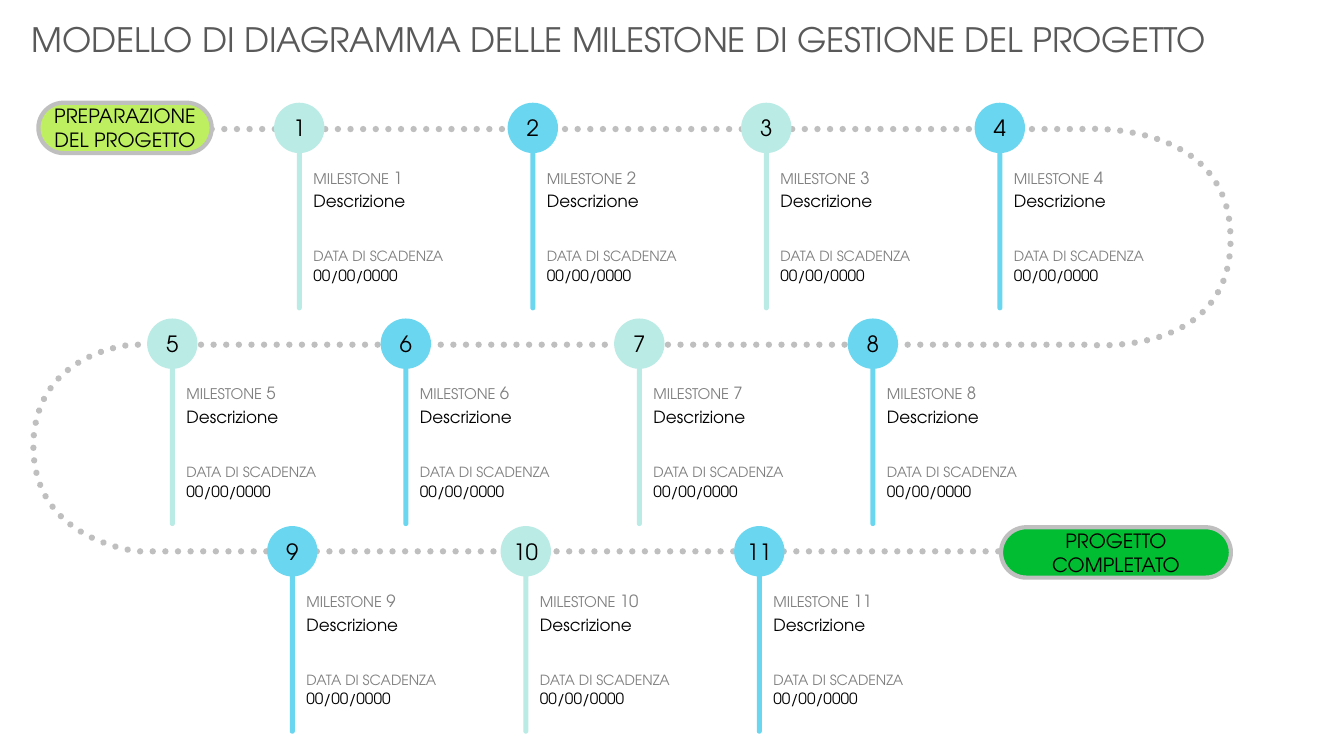
import pptx
import pptx.dml.color
import pptx.enum.dml
import pptx.enum.shapes
import pptx.enum.text
import pptx.oxml.ns
import pptx.util

Pt = pptx.util.Pt
KIND = pptx.enum.shapes.MSO_SHAPE
ALIGN = pptx.enum.text.PP_ALIGN
ANCHOR = pptx.enum.text.MSO_ANCHOR

FONT = "TeX Gyre Adventor"
BLACK, DARK, GRAY, SILVER = "000000", "595959", "808080", "BFBFBF"
MINT, BLUE, LIME, GREEN = "BBEBE5", "6BD6F0", "BEEF60", "00BD32"

DISC = 36
PITCH = 166.8
# left and top of the first disc, first number, colours in turn
ROWS = [
    (195.8, 73.4, (1, 2, 3, 4), (MINT, BLUE)),
    (105.1, 227.5, (5, 6, 7, 8), (MINT, BLUE)),
    (190.8, 375.8, (9, 10, 11), (BLUE, MINT)),
]


def color(code):
    return pptx.dml.color.RGBColor.from_string(code)


def write(para, text, size, code):
    run = para.add_run()
    run.text = text
    run.font.name = FONT
    run.font.size = Pt(size)
    run.font.color.rgb = color(code)


def clear(frame):
    """Wrap the text and drop the inner margins."""
    frame.word_wrap = True
    frame.margin_left = frame.margin_right = 0
    frame.margin_top = frame.margin_bottom = 0


def label(shapes, box, runs, after=None):
    frame = shapes.add_textbox(*map(Pt, box)).text_frame
    clear(frame)
    para = frame.paragraphs[0]
    if after:
        para.space_after = Pt(after)
    for run in runs:
        write(para, *run)


def solid(shapes, kind, box, fill, text="", size=16):
    """Add a filled shape without an outline, its text centred."""
    shape = shapes.add_shape(kind, *map(Pt, box))
    shape.shadow.inherit = False
    shape.fill.solid()
    shape.fill.fore_color.rgb = color(fill)
    shape.line.fill.background()
    if kind == KIND.ROUNDED_RECTANGLE:
        shape.adjustments[0] = 0.5
    if text:
        frame = shape.text_frame
        clear(frame)
        frame.vertical_anchor = ANCHOR.MIDDLE
        frame.paragraphs[0].alignment = ALIGN.CENTER
        write(frame.paragraphs[0], text, size, BLACK)
    return shape


def title(slide, box, text):
    head = slide.shapes.title
    head.left, head.top, head.width, head.height = map(Pt, box)
    frame = head.text_frame
    frame.word_wrap = True
    frame.auto_size = pptx.enum.text.MSO_AUTO_SIZE.NONE
    frame.vertical_anchor = ANCHOR.TOP
    frame.paragraphs[0].alignment = ALIGN.LEFT
    write(frame.paragraphs[0], text, 24, DARK)


def curve(start, pull, push, end, steps=24):
    """Return points along a cubic curve."""
    points = []
    for step in range(1, steps + 1):
        t = step / steps
        u = 1 - t
        points.append(tuple(
            u**3 * a + 3 * u * u * t * b + 3 * u * t * t * c + t**3 * d
            for a, b, c, d in zip(start, pull, push, end)))
    return points


def bend(start, bulge, end):
    """Turn from one row to the next through the bulge (x, top, middle, bottom)."""
    side, top, middle, low = bulge
    peak = (side, middle)
    return (curve(start, start, (side, top), peak)
            + curve(peak, (side, low), end, end))


def road(slide):
    right, left = (772.6, 92.2), (94.3, 246.2)
    points = [right]
    points += bend(right, (879.1, 84.2, 170.6, 257), (776.2, 246.2))
    points.append(left)
    points += bend(left, (23.8, 251.3, 319, 386.6), (98.6, 393.8))
    points.append((740.2, 393.8))
    pen = slide.shapes.build_freeform(Pt(151.2), Pt(92.2))
    pen.add_line_segments([(Pt(x), Pt(y)) for x, y in points], close=False)
    track = pen.convert_to_shape()
    track.shadow.inherit = False
    track.fill.background()
    track.line.color.rgb = color(SILVER)
    track.line.width = Pt(4.5)
    track.line.dash_style = pptx.enum.dml.MSO_LINE.ROUND_DOT
    track._element.spPr.find(pptx.oxml.ns.qn("a:ln")).set("cap", "rnd")


def badge(slide, box, fill, text):
    shape = solid(slide.shapes, KIND.ROUNDED_RECTANGLE, box, fill, text, 14)
    shape.line.color.rgb = color(SILVER)
    shape.line.width = Pt(3)


def stone(slide, left, top, number, fill):
    """Group one milestone: stem, four labels and numbered disc."""
    shapes = slide.shapes.add_group_shape().shapes
    stem = (left + 16.2, top + 13.7, 3.6, 134.6)
    solid(shapes, KIND.ROUNDED_RECTANGLE, stem, fill)
    text = left + 28.1
    label(shapes, (text, top + 46.1, 84.2, 18.7),
          [("MILESTONE", 10.5, GRAY), (" ", 11, GRAY), (str(number), 12, GRAY)])
    label(shapes, (text, top + 63, 98.6, 41), [("Descrizione", 12, BLACK)])
    label(shapes, (text, top + 103.7, 108, 14),
          [("DATA DI SCADENZA", 10, GRAY)], after=3)
    label(shapes, (text, top + 116.6, 64.8, 18.7), [("00/00/0000", 11, BLACK)])
    solid(shapes, KIND.OVAL, (left, top, DISC, DISC), fill, str(number))


def row(slide, left, top, numbers, fills):
    for place, number in enumerate(numbers):
        stone(slide, left + place * PITCH, top, number, fills[place % 2])


def main():
    deck = pptx.Presentation()
    deck.slide_width, deck.slide_height = Pt(960), Pt(540)
    slide = deck.slides.add_slide(deck.slide_layouts[5])
    title(slide, (15.1, 10.1, 880, 36),
          "MODELLO DI DIAGRAMMA DELLE MILESTONE DI GESTIONE DEL PROGETTO")
    road(slide)
    badge(slide, (27.4, 73.4, 123.8, 36), LIME, "PREPARAZIONE DEL PROGETTO")
    for entry in ROWS:
        row(slide, *entry)
    badge(slide, (715, 376.6, 164.2, 36), GREEN, "PROGETTO COMPLETATO")
    deck.save("out.pptx")


if __name__ == "__main__":
    main()
